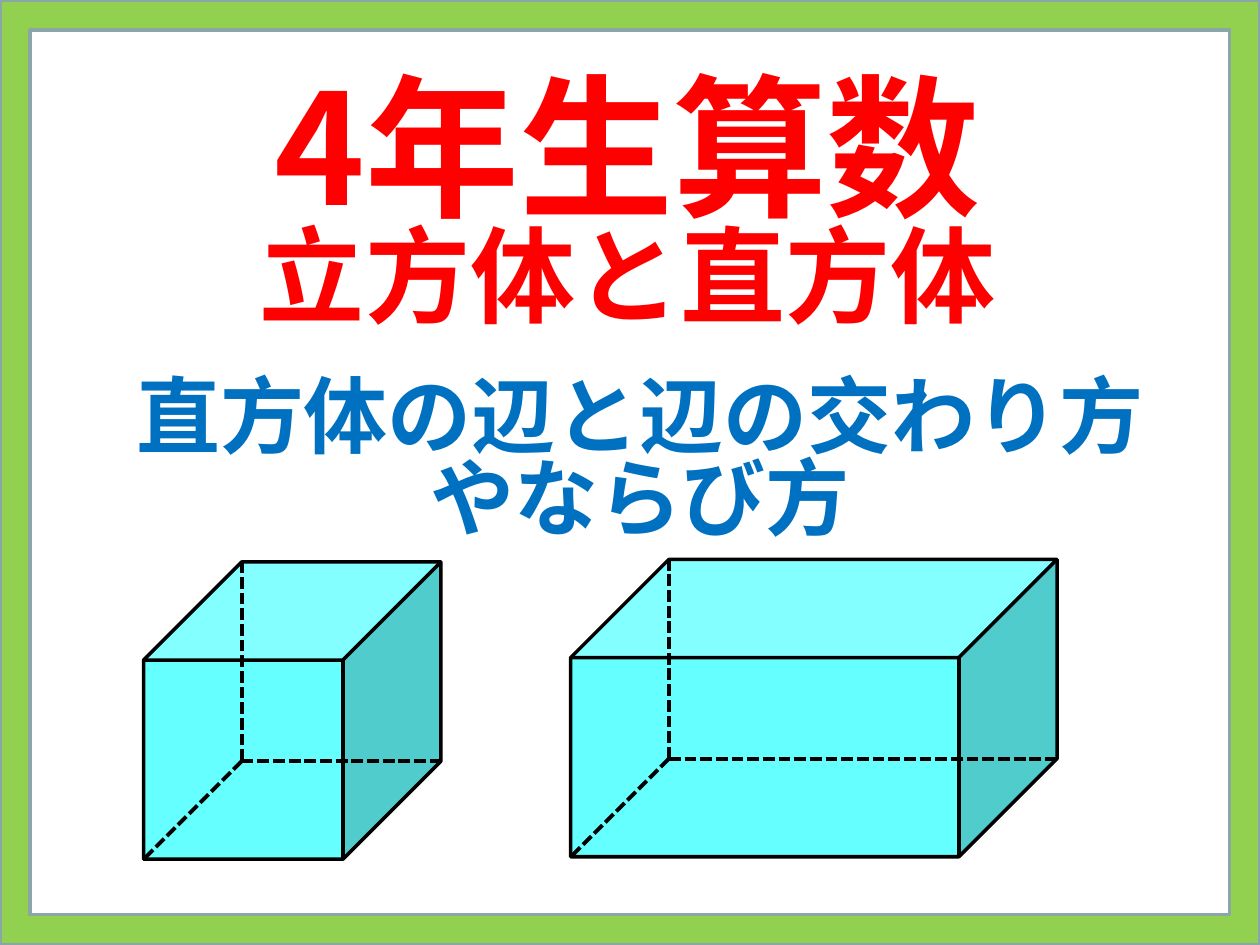
from lxml import etree
from pptx import Presentation
from pptx.dml.color import RGBColor
from pptx.enum.dml import MSO_LINE
from pptx.enum.shapes import MSO_CONNECTOR, MSO_SHAPE
from pptx.enum.text import MSO_ANCHOR, PP_ALIGN
from pptx.oxml.ns import qn
from pptx.util import Inches, Pt

FRAME, CUBE = MSO_SHAPE.FRAME, MSO_SHAPE.CUBE
STRAIGHT, DASH = MSO_CONNECTOR.STRAIGHT, MSO_LINE.SQUARE_DOT
MIDDLE, CENTER = MSO_ANCHOR.MIDDLE, PP_ALIGN.CENTER

GREEN = RGBColor(0x92, 0xD0, 0x50)
GRAY = RGBColor(0x8A, 0xA6, 0xA8)
RED = RGBColor(0xFF, 0x00, 0x00)
BLUE = RGBColor(0x00, 0x70, 0xC0)
CYAN = RGBColor(0x66, 0xFF, 0xFF)
BLACK = RGBColor(0x00, 0x00, 0x00)
FONT = "Noto Sans CJK JP"

WIDTH, HEIGHT = 10, 7.5
DEPTH_RATIO = 0.33
TEXTS = [
    {"box": (0.29, 0.32, 9.38, 2.49), "top_margin": 0.27, "spacing": 0.8, "color": RED,
     "lines": [("4年生算数", 88), ("立方体と直方体", 60)]},
    {"box": (0.58, 3, 9, 1.24), "top_margin": 0.17, "spacing": 0.82, "color": BLUE,
     "lines": [("直方体の辺と辺の交わり方", 48), ("やならび方", 48)]},
]
SOLIDS = [(1.14, 4.46, 2.36, 2.36), (4.53, 4.44, 3.86, 2.36)]


def add_solid_shape(slide, kind, box, adjustment, fill, line):
    shape = slide.shapes.add_shape(kind, *map(Inches, box))
    shape.shadow.inherit = False
    shape.adjustments[0] = adjustment
    shape.fill.solid()
    shape.fill.fore_color.rgb = fill
    shape.line.color.rgb = line
    shape.line.width = Pt(2)


def add_hidden_edges(slide, left, top, width, height):
    depth = DEPTH_RATIO * min(width, height)
    right, bottom = left + width, top + height
    corner = (left + depth, bottom - depth)
    for end in [(corner[0], top), (right, corner[1]), (left, bottom)]:
        edge = slide.shapes.add_connector(STRAIGHT, *map(Inches, corner + end))
        edge.line.color.rgb = BLACK
        edge.line.width = Pt(2.25)
        edge.line.dash_style = DASH
        etree.SubElement(edge._element.spPr, qn("a:effectLst"))


def add_text(slide, text):
    text_frame = slide.shapes.add_textbox(*map(Inches, text["box"])).text_frame
    text_frame.word_wrap = True
    text_frame.vertical_anchor = MIDDLE
    text_frame.margin_top = Inches(text["top_margin"])
    text_frame.text = "\n".join(line for line, size in text["lines"])
    for paragraph, (line, size) in zip(text_frame.paragraphs, text["lines"]):
        paragraph.alignment = CENTER
        paragraph.line_spacing = text["spacing"]
        font = paragraph.runs[0].font
        font.name = FONT
        font.size = Pt(size)
        font.bold = True
        font.color.rgb = text["color"]
        east_asian = etree.SubElement(font._element, qn("a:ea"))
        east_asian.set("typeface", FONT)


def main():
    presentation = Presentation()
    presentation.slide_width = Inches(WIDTH)
    presentation.slide_height = Inches(HEIGHT)
    slide = presentation.slides.add_slide(presentation.slide_layouts[6])
    add_solid_shape(slide, FRAME, (0, 0, WIDTH, HEIGHT), 0.032, GREEN, GRAY)
    for text in TEXTS:
        add_text(slide, text)
    for box in SOLIDS:
        add_solid_shape(slide, CUBE, box, DEPTH_RATIO, CYAN, BLACK)
        add_hidden_edges(slide, *box)
    presentation.save("out.pptx")


if __name__ == "__main__":
    main()
